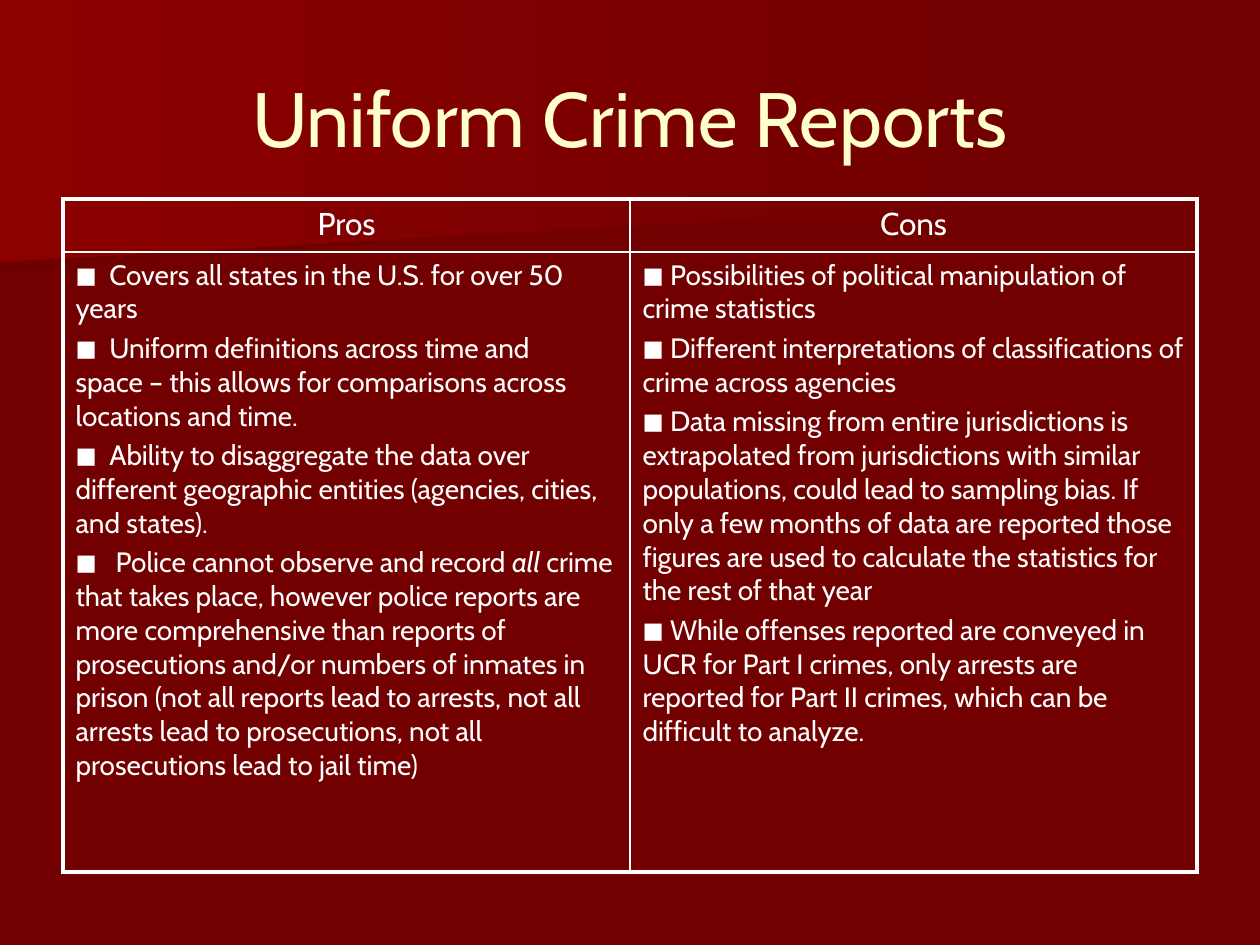
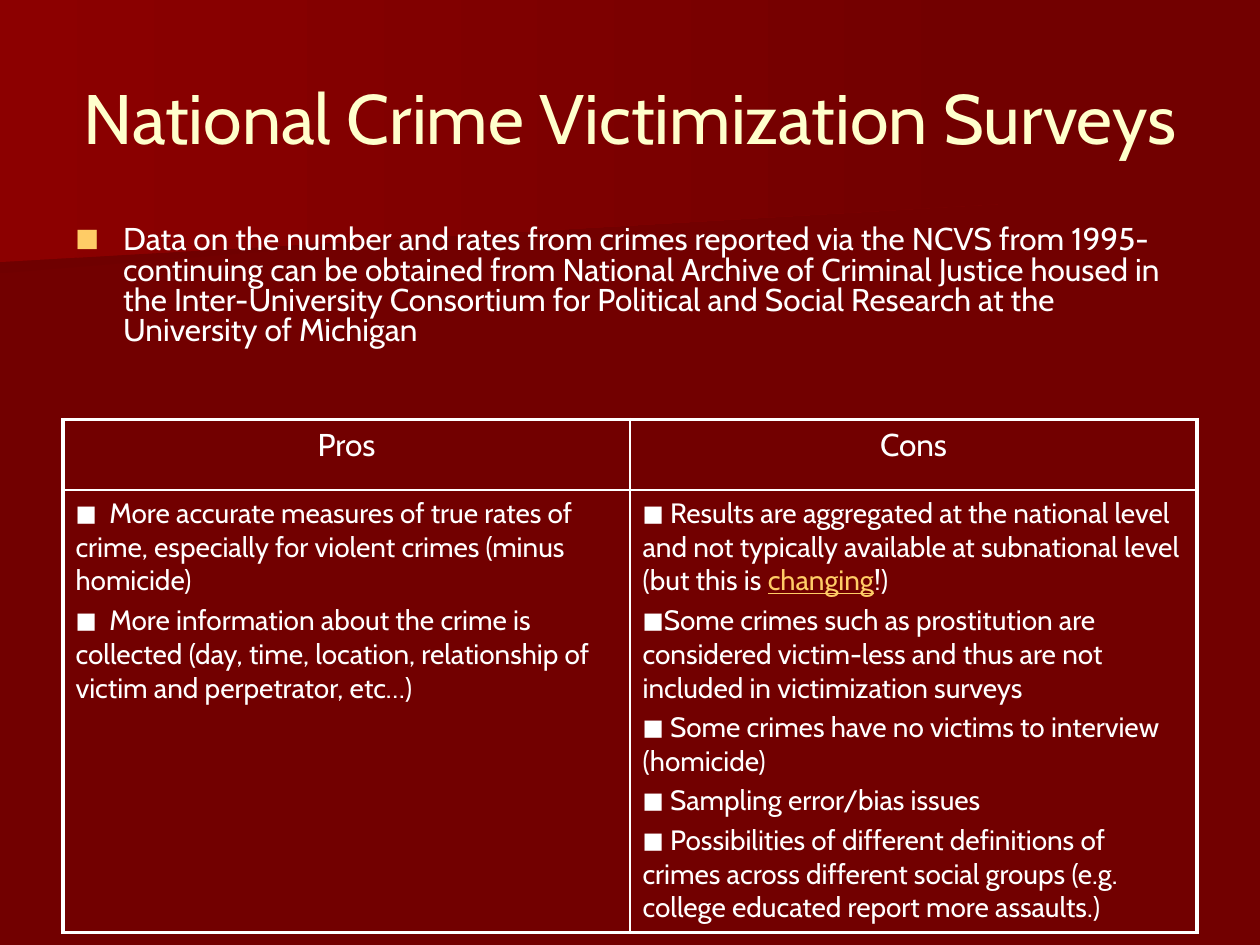
from dataclasses import dataclass

from lxml.etree import SubElement
from pptx import Presentation
from pptx.dml.color import RGBColor
from pptx.enum.text import MSO_ANCHOR, MSO_AUTO_SIZE, PP_ALIGN
from pptx.oxml import parse_xml
from pptx.oxml.ns import nsdecls, qn
from pptx.util import Inches, Pt


@dataclass(frozen=True)
class Theme:
    font: str = "Cabin"
    background: str = "720000"
    band_shade: str = "6F0000"
    band_glow: str = "8C0000"
    title: str = "FFFFCC"
    text: str = "FFFFFF"
    accent: str = "FFCC66"
    heading_size: float = 18
    cell_size: float = 16
    space_before: float = 0.2
    outer_border: float = 2.25
    inner_border: float = 1


LEFT, WIDTH = 0.5, 9
LOWER_BAND = [(7.78, 1.53), (0, 2.17), (0, 1.01), (7.79, 1.01), (7.78, 1.28)]
UPPER_BAND = [(7.92, 1.62), (0, 2.08), (0, 0), (7.92, 0)]


class Deck:
    """Holds the style and the slide being built."""

    def __init__(self, theme):
        self.theme = theme
        self.presentation = Presentation()
        self.presentation.slide_width = Inches(10)
        self.presentation.slide_height = Inches(7.5)
        self.slide = None

    def add_slide(self, title, size):
        layout = self.presentation.slide_layouts[5]
        self.slide = self.presentation.slides.add_slide(layout)
        fill = self.slide.background.fill
        fill.solid()
        fill.fore_color.rgb = RGBColor.from_string(self.theme.background)
        self.add_band(LOWER_BAND, self.theme.band_shade)
        self.add_band(UPPER_BAND, self.theme.band_glow)
        self.add_title(title, size)

    def add_band(self, points, start_color):
        corners = [(Inches(x), Inches(y)) for x, y in points]
        builder = self.slide.shapes.build_freeform(*corners[0])
        builder.add_line_segments(corners[1:], close=True)
        band = builder.convert_to_shape()
        band.shadow.inherit = False
        band.line.fill.background()
        band.fill.gradient()
        band.fill.gradient_angle = 0
        for stop, color in zip(band.fill.gradient_stops, (start_color, self.theme.background)):
            stop.color.rgb = RGBColor.from_string(color)
        first, last = band.fill.gradient_stops
        first.position, last.position = 0, 1

    def add_title(self, text, size):
        title = self.slide.shapes.title
        self.slide.shapes._spTree.append(title._element)  # in front of the bands
        title.left, title.top = Inches(LEFT), Inches(0.3)
        title.width, title.height = Inches(WIDTH), Inches(1.25)
        frame = title.text_frame
        frame.text = text
        frame.word_wrap = True
        frame.auto_size = MSO_AUTO_SIZE.NONE
        frame.vertical_anchor = MSO_ANCHOR.MIDDLE
        paragraph = frame.paragraphs[0]
        paragraph.alignment = PP_ALIGN.CENTER
        self.style_run(paragraph.runs[0], size, self.theme.title)

    def style_run(self, run, size, color):
        run.font.name = self.theme.font
        run.font.size = Pt(size)
        run.font.color.rgb = RGBColor.from_string(color)

    def fill_paragraph(self, paragraph, content, size):
        """Content is a string or a list of (text, style) pieces."""
        pieces = [(content, None)] if isinstance(content, str) else content
        paragraph.space_before = Pt(size * self.theme.space_before)
        for text, style in pieces:
            run = paragraph.add_run()
            run.text = text
            linked = style == "link"
            self.style_run(run, size, self.theme.accent if linked else self.theme.text)
            if linked:
                run.font.underline = True
            if style == "italic":
                run.font.italic = True

    def add_bullet(self, paragraph, color, indent=0):
        properties = paragraph._p.get_or_add_pPr()
        properties.set("marL", str(Inches(indent)))
        properties.set("indent", str(-Inches(indent)))
        bullet_color = SubElement(properties, qn("a:buClr"))
        SubElement(bullet_color, qn("a:srgbClr"), val=color)
        SubElement(properties, qn("a:buSzPct"), val="80000")
        SubElement(properties, qn("a:buFont"), typeface=self.theme.font)
        SubElement(properties, qn("a:buChar"), char="■")

    def add_bullet_text(self, text, top, height):
        box = self.slide.shapes.add_textbox(
            Inches(LEFT), Inches(top), Inches(WIDTH), Inches(height))
        box.text_frame.word_wrap = True
        paragraph = box.text_frame.paragraphs[0]
        paragraph.line_spacing = 0.8
        self.fill_paragraph(paragraph, text, self.theme.heading_size)
        self.add_bullet(paragraph, self.theme.accent, indent=0.38)

    def add_comparison(self, top, row_heights, columns):
        """Draw one column for each heading and its list of points."""
        table = self.slide.shapes.add_table(
            2, len(columns), Inches(LEFT), Inches(top),
            Inches(WIDTH), Inches(sum(row_heights))).table
        table.first_row = table.horz_banding = False
        for row, height in zip(table.rows, row_heights):
            row.height = Inches(height)
        for index, (heading, points) in enumerate(columns.items()):
            table.columns[index].width = Inches(WIDTH / len(columns))
            heading_cell, points_cell = table.cell(0, index), table.cell(1, index)

            paragraph = heading_cell.text_frame.paragraphs[0]
            paragraph.alignment = PP_ALIGN.CENTER
            self.fill_paragraph(paragraph, heading, self.theme.heading_size)

            frame = points_cell.text_frame
            for number, point in enumerate(points):
                paragraph = frame.add_paragraph() if number else frame.paragraphs[0]
                self.fill_paragraph(paragraph, point, self.theme.cell_size)
                self.add_bullet(paragraph, self.theme.text)

            is_first, is_last = index == 0, index == len(columns) - 1
            self.style_cell(heading_cell, L=is_first, R=is_last, T=True, B=False)
            self.style_cell(points_cell, L=is_first, R=is_last, T=False, B=True)

    def style_cell(self, cell, **outer_sides):
        cell.fill.background()
        properties = cell._tc.get_or_add_tcPr()
        for position, (side, is_outer) in enumerate(outer_sides.items()):
            width = Pt(self.theme.outer_border if is_outer else self.theme.inner_border)
            properties.insert(position, parse_xml(
                f'<a:ln{side} {nsdecls("a")} w="{width}"><a:solidFill>'
                f'<a:srgbClr val="{self.theme.text}"/></a:solidFill></a:ln{side}>'))


def main():
    deck = Deck(Theme())

    # Uniform Crime Reports
    deck.add_slide("Uniform Crime Reports", 44)
    deck.add_comparison(1.58, (0.42, 4.92), {
        "Pros": [
            "  Covers all states in the U.S. for over 50 years",
            "  Uniform definitions across time and    space – this allows for "
            "comparisons across locations and time.",
            "  Ability to disaggregate the data over different geographic entities "
            "(agencies, cities, and states).",
            [("   Police cannot observe and record ", None),
             ("all ", "italic"),
             ("crime that takes place, however police reports are more comprehensive "
              "than reports of prosecutions and/or numbers of inmates in prison (not "
              "all reports lead to arrests, not all arrests lead to prosecutions, not "
              "all prosecutions lead to jail time)", None)],
        ],
        "Cons": [
            " Possibilities of political manipulation of crime statistics",
            " Different interpretations of classifications of crime across agencies",
            " Data missing from entire jurisdictions is extrapolated from jurisdictions "
            "with similar populations, could lead to sampling bias. If only a few months "
            "of data are reported those figures are used to calculate the statistics for "
            "the rest of that year",
            " While offenses reported are conveyed in UCR for Part I crimes, only arrests "
            "are reported for Part II crimes, which can be difficult to analyze.",
        ],
    })

    # National Crime Victimization Surveys
    deck.add_slide("National Crime Victimization Surveys", 40)
    deck.add_comparison(3.33, (0.56, 3.51), {
        "Pros": [
            "  More accurate measures of true rates of crime, especially for violent "
            "crimes (minus homicide)",
            "  More information about the crime is collected (day, time, location, "
            "relationship of victim and perpetrator, etc…)",
        ],
        "Cons": [
            [(" Results are aggregated at the national level and not typically available "
              "at subnational level (but this is ", None),
             ("changing", "link"),
             ("!)", None)],
            "Some crimes such as prostitution are considered victim-less and thus are not "
            "included in victimization surveys",
            " Some crimes have no victims to interview (homicide)",
            " Sampling error/bias issues",
            " Possibilities of different definitions of crimes across different social "
            "groups (e.g. college educated report more assaults.)",
        ],
    })
    deck.add_bullet_text(
        "Data on the number and rates from crimes reported via the NCVS from "
        "1995-continuing can be obtained from National Archive of Criminal Justice housed "
        "in the Inter-University Consortium for Political and Social Research at the "
        "University of Michigan", top=1.75, height=1.37)

    deck.presentation.save("out.pptx")


if __name__ == "__main__":
    main()
